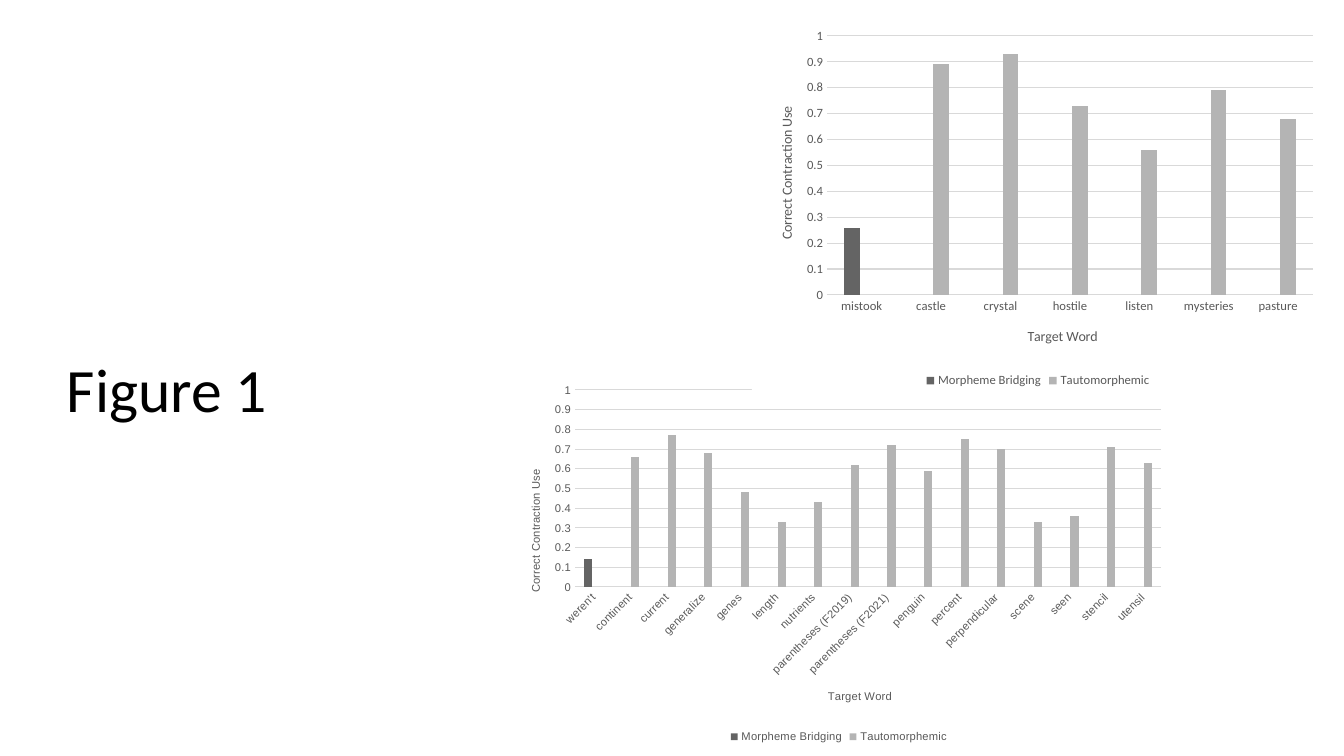
from lxml.etree import SubElement
from pptx import Presentation
from pptx.chart.data import CategoryChartData
from pptx.dml.color import RGBColor
from pptx.enum.chart import XL_CHART_TYPE, XL_LEGEND_POSITION, XL_TICK_MARK
from pptx.enum.text import MSO_ANCHOR
from pptx.oxml import parse_xml
from pptx.oxml.ns import nsdecls, qn
from pptx.util import Emu, Pt

COLORS = {"black": "000000", "label": "595959", "line": "D9D9D9",
          "paper": "FFFFFF", "bridging": "646464", "tauto": "B4B4B4"}
SERIES = [("Morpheme Bridging", "bridging"), ("Tautomorphemic", "tauto")]
AXIS_TITLES = {"category": "Target Word", "value": "Correct Contraction Use"}

# The first word of each chart is morpheme bridging, the others are tautomorphemic.
CHARTS = [
    {"box": (504, 376, 670, 371), "plot": (575, 390, 586, 197),
     "category_title": (826, 687), "value_title": (526, 467),
     "font": "Arial", "size": 8, "title_size": 8, "angle": -45,
     "words": [("weren't", 0.14), ("continent", 0.66), ("current", 0.77),
               ("generalize", 0.68), ("genes", 0.48), ("length", 0.33),
               ("nutrients", 0.43), ("parentheses (F2019)", 0.62),
               ("parentheses (F2021)", 0.72), ("penguin", 0.59),
               ("percent", 0.75), ("perpendicular", 0.7), ("scene", 0.33),
               ("seen", 0.36), ("stencil", 0.71), ("utensil", 0.63)]},
    {"box": (752, 21, 572, 371), "plot": (827, 36, 486, 259),
     "category_title": (1025, 325), "value_title": (775, 104),
     "font": "Calibri", "size": 9, "title_size": 10, "angle": 0,
     "words": [("mistook", 0.26), ("castle", 0.89), ("crystal", 0.93),
               ("hostile", 0.73), ("listen", 0.56), ("mysteries", 0.79),
               ("pasture", 0.68)]},
]
TITLE = {"text": "Figure 1", "box": (57, 320, 254, 146), "font": "Calibri", "size": 44}
SLIDE = (1344, 756)
PX = 914400 / 100.8


def emu(lengths):
    return [Emu(round(length * PX)) for length in lengths]


def color(name):
    return RGBColor.from_string(COLORS[name])


def style_font(font, name, size, shade):
    font.name, font.size, font.bold = name, Pt(size), False
    font.color.rgb = color(shade)


def set_layout(parent, index, box, place, inner=False):
    """Fix a chart part at place, given in slide px, inside the chart's box."""
    for old in parent.findall(qn("c:layout")):
        parent.remove(old)
    layout = parse_xml(f"<c:layout {nsdecls('c')}><c:manualLayout/></c:layout>")
    manual = layout[0]
    settings = [("layoutTarget", "inner")] if inner else []
    settings += [("xMode", "edge"), ("yMode", "edge")]
    origin = (box[0], box[1], 0, 0)
    extent = (box[2], box[3], box[2], box[3])
    settings += [(key, f"{(length - start) / total:.4f}") for key, length, start, total
                 in zip("xywh", place, origin, extent)]
    for key, value in settings:
        SubElement(manual, qn(f"c:{key}")).set("val", value)
    parent.insert(index, layout)


def style_axis(axis, kind, details):
    axis.major_tick_mark = axis.minor_tick_mark = XL_TICK_MARK.NONE
    style_font(axis.tick_labels.font, details["font"], details["size"], "label")
    frame = axis.axis_title.text_frame
    frame.text = AXIS_TITLES[kind]
    style_font(frame.paragraphs[0].runs[0].font, details["font"],
               details["title_size"], "label")
    title = axis.axis_title._element
    set_layout(title, 1, details["box"], details[f"{kind}_title"])
    if kind == "value":
        title.find(".//" + qn("a:bodyPr")).set("rot", "-5400000")


def style_line(line):
    line.color.rgb = color("line")
    line.width = Pt(0.75)


def add_word_chart(page, details):
    words = details["words"]
    data = CategoryChartData()
    data.categories = [word for word, _ in words]
    values = [value for _, value in words]
    split = [values[:1] + [None] * (len(values) - 1), [None] + values[1:]]
    for (name, _), column in zip(SERIES, split):
        data.add_series(name, column)
    chart = page.shapes.add_chart(XL_CHART_TYPE.COLUMN_CLUSTERED,
                                  *emu(details["box"]), data).chart
    chart.has_title = False
    style_font(chart.font, details["font"], details["size"], "label")
    chart._chartSpace.find(qn("c:chart")).addnext(parse_xml(
        f"<c:spPr {nsdecls('c', 'a')}><a:solidFill><a:srgbClr val=\"{COLORS['paper']}\"/>"
        "</a:solidFill><a:ln><a:noFill/></a:ln></c:spPr>"))

    plot = chart.plots[0]
    plot.gap_width, plot.overlap, plot.vary_by_categories = 219, -27, False
    for series, (_, shade) in zip(plot.series, SERIES):
        series.format.fill.solid()
        series.format.fill.fore_color.rgb = color(shade)
    set_layout(chart._chartSpace.find(".//" + qn("c:plotArea")), 0,
               details["box"], details["plot"], inner=True)

    style_axis(chart.category_axis, "category", details)
    style_line(chart.category_axis.format.line)
    labels = chart.category_axis._element.find(qn("c:txPr"))
    labels.find(qn("a:bodyPr")).set("rot", str(details["angle"] * 60000))

    value_axis = chart.value_axis
    style_axis(value_axis, "value", details)
    value_axis.format.line.fill.background()
    value_axis.minimum_scale, value_axis.maximum_scale = 0, 1
    value_axis.major_unit = 0.1
    style_line(value_axis.major_gridlines.format.line)

    chart.has_legend = True
    chart.legend.position = XL_LEGEND_POSITION.BOTTOM
    chart.legend.include_in_layout = False
    style_font(chart.legend.font, details["font"], details["size"], "label")


def add_title(page):
    frame = page.shapes.add_textbox(*emu(TITLE["box"])).text_frame
    frame.word_wrap = True
    frame.vertical_anchor = MSO_ANCHOR.MIDDLE
    frame.text = TITLE["text"]
    para = frame.paragraphs[0]
    para.line_spacing = 0.9
    style_font(para.runs[0].font, TITLE["font"], TITLE["size"], "black")


def main():
    deck = Presentation()
    deck.slide_width, deck.slide_height = emu(SLIDE)
    page = deck.slides.add_slide(deck.slide_layouts[6])
    add_title(page)
    for details in CHARTS:
        add_word_chart(page, details)
    deck.save("out.pptx")


if __name__ == "__main__":
    main()
